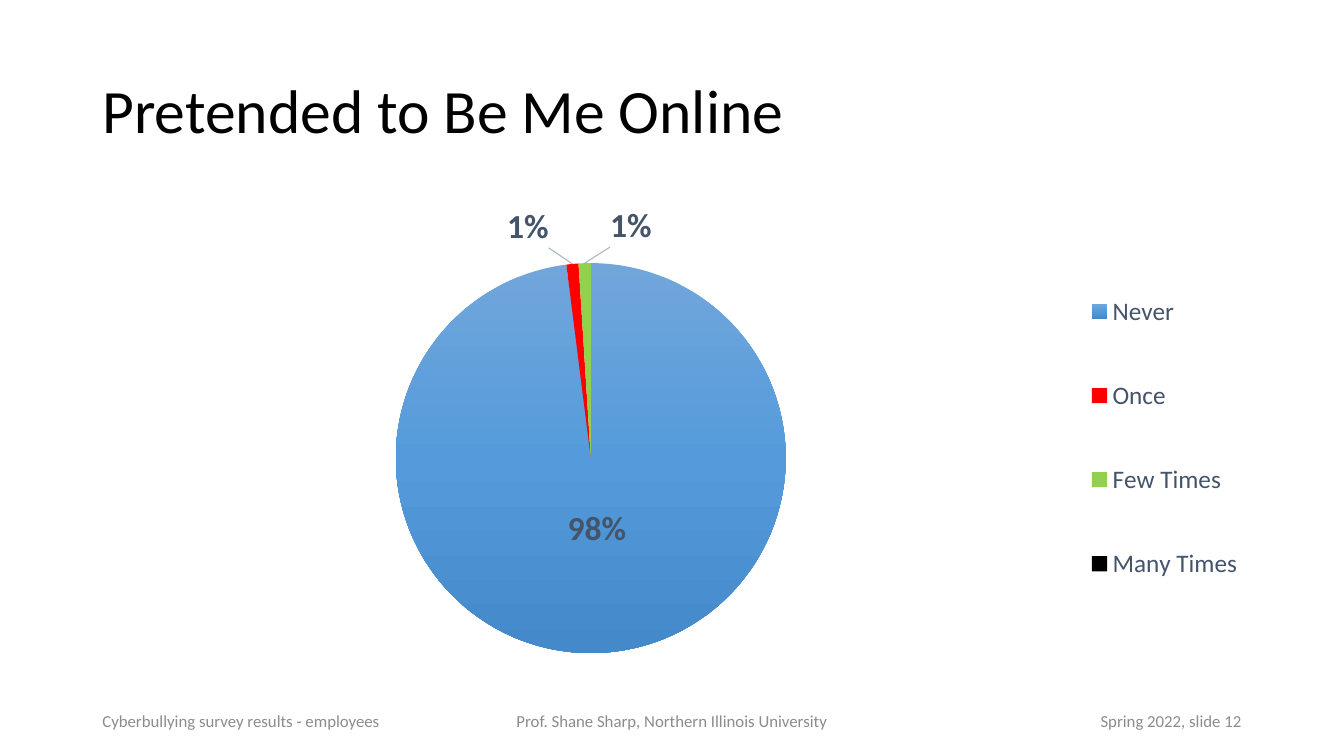
from copy import deepcopy

from lxml import etree
from pptx import Presentation
from pptx.chart.data import CategoryChartData
from pptx.dml.color import RGBColor
from pptx.enum.chart import XL_CHART_TYPE, XL_LABEL_POSITION, XL_LEGEND_POSITION
from pptx.enum.text import MSO_ANCHOR, PP_ALIGN
from pptx.oxml import parse_xml
from pptx.oxml.ns import nsdecls, qn
from pptx.util import Cm, Pt

LEFT, CENTER, RIGHT = PP_ALIGN.LEFT, PP_ALIGN.CENTER, PP_ALIGN.RIGHT
INSIDE, OUTSIDE = XL_LABEL_POSITION.CENTER, XL_LABEL_POSITION.OUTSIDE_END

# Content
TITLE = "Pretended to Be Me Online"
ANSWERS = {"Never": 98, "Once": 1, "Few Times": 1, "Many Times": 0}
FOOTERS = [  # text, left, width, alignment
    ("Cyberbullying survey results - employees", 2.33, 7.62, LEFT),
    ("Prof. Shane Sharp, Northern Illinois University", 11.22, 11.43, CENTER),
    ("Spring 2022, slide 12", 23.92, 7.62, RIGHT),
]

# Style
FONT = "Calibri"
COLORS = {
    "title": "000000", "chart text": "44546A", "footer": "8C8C8C", "leader": "A9B4C2",
    "Once": "FF0000", "Few Times": "92D050", "Many Times": "000000",
}
NEVER_GRADIENT = [(0, "71A6DB"), (0.5, "559BDB"), (1, "448ACA")]
# Fractions of the chart area: left, top, width, height
PIE_AREA = (0.26, 0.12, 0.34, 0.76)
LEGEND_AREA = (0.85, 0.08, 0.15, 0.76)
# Label position and its shift as fractions of the chart area
LABELS = [(INSIDE, 0, -0.05), (OUTSIDE, -0.02, -0.02), (OUTSIDE, 0.04, -0.02)]


def color(key):
    return RGBColor.from_string(COLORS[key])


def style(font, size, key, bold=False):
    font.name, font.size, font.bold = FONT, Pt(size), bold
    font.color.rgb = color(key)


def add_text(slide, text, box, size, key, align=LEFT):
    frame = slide.shapes.add_textbox(*map(Cm, box)).text_frame
    frame.word_wrap = True
    frame.vertical_anchor = MSO_ANCHOR.MIDDLE
    paragraph = frame.paragraphs[0]
    paragraph.text, paragraph.alignment = text, align
    style(paragraph.font, size, key)
    return paragraph


def layout(values, *modes):
    """Manual chart layout: modes first, then x, y and optionally w, h."""
    parts = [*modes, *zip("xywh", values)]
    inner = "".join(f'<c:{tag} val="{value}"/>' for tag, value in parts)
    return parse_xml(f'<c:layout {nsdecls("c")}><c:manualLayout>{inner}'
                     '</c:manualLayout></c:layout>')


def place(parent, after, new_layout):
    for old in parent.findall(qn("c:layout")):
        parent.remove(old)
    if after is None:
        parent.insert(0, new_layout)
    else:
        parent.find(qn(after)).addnext(new_layout)


prs = Presentation()
prs.slide_width, prs.slide_height = Cm(33.87), Cm(19.05)
slide = prs.slides.add_slide(prs.slide_layouts[6])

# Title
title = add_text(slide, TITLE, (2.33, 1.01, 29.21, 3.68), 44, "title")
title.line_spacing = 0.9

# Pie chart
data = CategoryChartData()
data.categories = list(ANSWERS)
data.add_series("Series 1", list(ANSWERS.values()))
chart = slide.shapes.add_chart(
    XL_CHART_TYPE.PIE, Cm(2.33), Cm(5.08), Cm(29.21), Cm(12.93), data).chart
chart.has_title = False
style(chart.font, 10, "title")
plot = chart.plots[0]
plot.vary_by_categories = True
pie = plot.series[0]

# Slices
for index, answer in enumerate(ANSWERS):
    fill = pie.points[index].format.fill
    if answer in COLORS:
        fill.solid()
        fill.fore_color.rgb = color(answer)
        continue
    fill.gradient()
    fill.gradient_angle = 270
    stops = chart.element.xpath(".//a:gsLst")[0] if hasattr(chart, "element") else \
        chart._chartSpace.xpath(".//a:gsLst")[0]
    stops.insert(1, deepcopy(stops[0]))
    for stop, (position, value) in zip(fill.gradient_stops, NEVER_GRADIENT):
        stop.position = position
        stop.color.rgb = RGBColor.from_string(value)

# Percentage labels; the empty slice has none
labels = pie.data_labels
labels.show_value, labels.show_percentage = False, True
style(labels.font, 24, "chart text", bold=True)
for index, (position, *shift) in enumerate(LABELS):
    label = pie.points[index].data_label
    style(label.font, 24, "chart text", bold=True)
    label.position = position
pie.points[len(LABELS)].data_label.position = OUTSIDE
for index, node in enumerate(pie._element.xpath("c:dLbls/c:dLbl")):
    shown = index < len(LABELS)
    node.find(qn("c:showVal")).set("val", "0")
    node.find(qn("c:showPercent")).set("val", str(int(shown)))
    if shown:
        place(node, "c:idx", layout(LABELS[index][1:]))

# Leader lines
all_labels = pie._element.find(qn("c:dLbls"))
for tag in ("c:showLeaderLines", "c:leaderLines"):
    for old in all_labels.findall(qn(tag)):
        all_labels.remove(old)
etree.SubElement(all_labels, qn("c:showLeaderLines")).set("val", "1")
all_labels.append(parse_xml(
    f'<c:leaderLines {nsdecls("c", "a")}><c:spPr><a:ln w="9525"><a:solidFill>'
    f'<a:srgbClr val="{COLORS["leader"]}"/></a:solidFill></a:ln></c:spPr></c:leaderLines>'))

# Legend and plot placement
chart.has_legend = True
chart.legend.position = XL_LEGEND_POSITION.RIGHT
chart.legend.include_in_layout = False
style(chart.legend.font, 18, "chart text")
edges = [("xMode", "edge"), ("yMode", "edge")]
place(chart.legend._element, "c:legendPos", layout(LEGEND_AREA, *edges))
place(chart._chartSpace.xpath(".//c:plotArea")[0], None,
      layout(PIE_AREA, ("layoutTarget", "inner"), *edges))

# Footers
for text, left, width, align in FOOTERS:
    add_text(slide, text, (left, 17.65, width, 1.02), 12, "footer", align)

prs.save("out.pptx")
